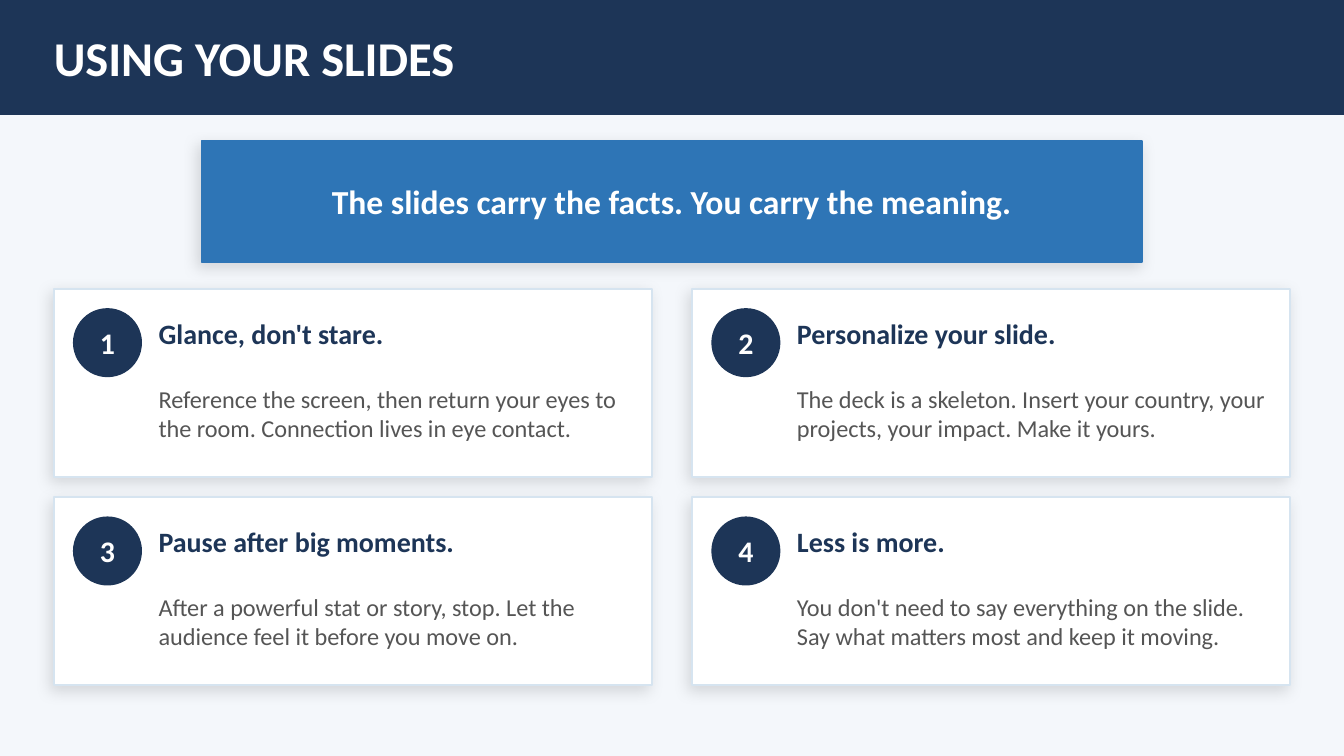
from lxml import etree
from pptx import Presentation
from pptx import util as u
from pptx.dml import color
from pptx.enum import shapes, text
from pptx.oxml import ns

Pt = u.Pt
WIDE, HIGH = 720, 405
EDGE = 28.8
HUES = {
    "back": "F4F7FB",
    "navy": "1D3557",
    "blue": "2E75B6",
    "white": "FFFFFF",
    "rim": "D6E4F0",
    "gray": "555555",
    "black": "000000",
}
TIPS = [
    ("Glance, don't stare.",
     "Reference the screen, then return your eyes to the room. Connection lives in eye contact."),
    ("Personalize your slide.",
     "The deck is a skeleton. Insert your country, your projects, your impact. Make it yours."),
    ("Pause after big moments.",
     "After a powerful stat or story, stop. Let the audience feel it before you move on."),
    ("Less is more.",
     "You don't need to say everything on the slide. Say what matters most and keep it moving."),
]
FONTS = {
    "title": {"size": Pt(26), "bold": True},
    "banner": {"size": Pt(18), "bold": True},
    "badge": {"size": Pt(16), "bold": True},
    "head": {"size": Pt(15), "bold": True},
    "body": {"size": Pt(13), "bold": False},
}
FLUSH = dict.fromkeys(("margin_left", "margin_top", "margin_right", "margin_bottom"), 0)
CENTER = text.PP_ALIGN.CENTER
LEFT = text.PP_ALIGN.LEFT


def apply(item, values):
    for name, value in values.items():
        setattr(item, name, value)


def hue(name):
    return color.RGBColor.from_string(HUES[name])


def write(shape, words, style, tint, align=LEFT, frame=FLUSH):
    box = shape.text_frame
    apply(box, {"word_wrap": True, "auto_size": text.MSO_AUTO_SIZE.NONE,
                "vertical_anchor": text.MSO_ANCHOR.MIDDLE, **frame})
    box.text = words
    para = box.paragraphs[0]
    para.alignment = align
    apply(para.font, {"name": "Calibri", **FONTS[style]})
    para.font.color.rgb = hue(tint)


def draw(slide, kind, box, fill, line):
    shape = slide.shapes.add_shape(kind, *map(Pt, box))
    shape.shadow.inherit = False
    shape.fill.solid()
    shape.fill.fore_color.rgb = hue(fill)
    shape.line.color.rgb = hue(line)
    shape.line.width = Pt(1)
    return shape


def shade(shape):
    list_el = shape._element.spPr.find(ns.qn("a:effectLst"))
    outer = etree.SubElement(list_el, ns.qn("a:outerShdw"), blurRad=str(Pt(8)),
                             dist=str(Pt(3)), dir=str(135 * 60000),
                             algn="bl", rotWithShape="0")
    tint = etree.SubElement(outer, ns.qn("a:srgbClr"), val=HUES["black"])
    etree.SubElement(tint, ns.qn("a:alpha"), val="12000")


def add_header(slide, box, words):
    x, y, w, h = box
    bar = draw(slide, shapes.MSO_SHAPE.RECTANGLE, box, "navy", "navy")
    title = slide.shapes.title
    bar._element.addnext(title._element)
    apply(title, {"left": Pt(x + EDGE), "top": Pt(y),
                  "width": Pt(w - 2 * EDGE), "height": Pt(h)})
    write(title, words, "title", "white")


def add_banner(slide, box, words):
    panel = draw(slide, shapes.MSO_SHAPE.RECTANGLE, box, "blue", "blue")
    shade(panel)
    write(panel, words, "banner", "white", CENTER, {})


def add_card(slide, box, num, head, body):
    x, y, w, h = box
    shade(draw(slide, shapes.MSO_SHAPE.RECTANGLE, box, "white", "rim"))
    badge = draw(slide, shapes.MSO_SHAPE.OVAL, (x + 10.8, y + 10.8, 36, 36), "navy", "navy")
    write(badge, str(num), "badge", "white", CENTER)
    rows = [(head, "head", "navy", 9.36, 28.8), (body, "body", "gray", 39.6, 54)]
    for words, style, tint, drop, tall in rows:
        area = (x + 56.16, y + drop, w - 64.8, tall)
        write(slide.shapes.add_textbox(*map(Pt, area)), words, style, tint)


def add_cards(slide, box, tips, cols=2, gap_x=21.6, gap_y=10.8):
    x, y, w, h = box
    rows = -(-len(tips) // cols)
    wide = (w - gap_x * (cols - 1)) / cols
    high = (h - gap_y * (rows - 1)) / rows
    for i, (head, body) in enumerate(tips):
        row, col = divmod(i, cols)
        spot = (x + col * (wide + gap_x), y + row * (high + gap_y), wide, high)
        add_card(slide, spot, i + 1, head, body)


def main():
    deck = Presentation()
    apply(deck, {"slide_width": Pt(WIDE), "slide_height": Pt(HIGH)})
    slide = deck.slides.add_slide(deck.slide_layouts.get_by_name("Title Only"))
    slide.background.fill.solid()
    slide.background.fill.fore_color.rgb = hue("back")
    add_header(slide, (0, 0, WIDE, 61.2), "USING YOUR SLIDES")
    add_banner(slide, (108, 75.6, 504, 64.8),
               "The slides carry the facts. You carry the meaning.")
    add_cards(slide, (EDGE, 154.8, WIDE - 2 * EDGE, 212.4), TIPS)
    deck.save("out.pptx")


if __name__ == "__main__":
    main()
